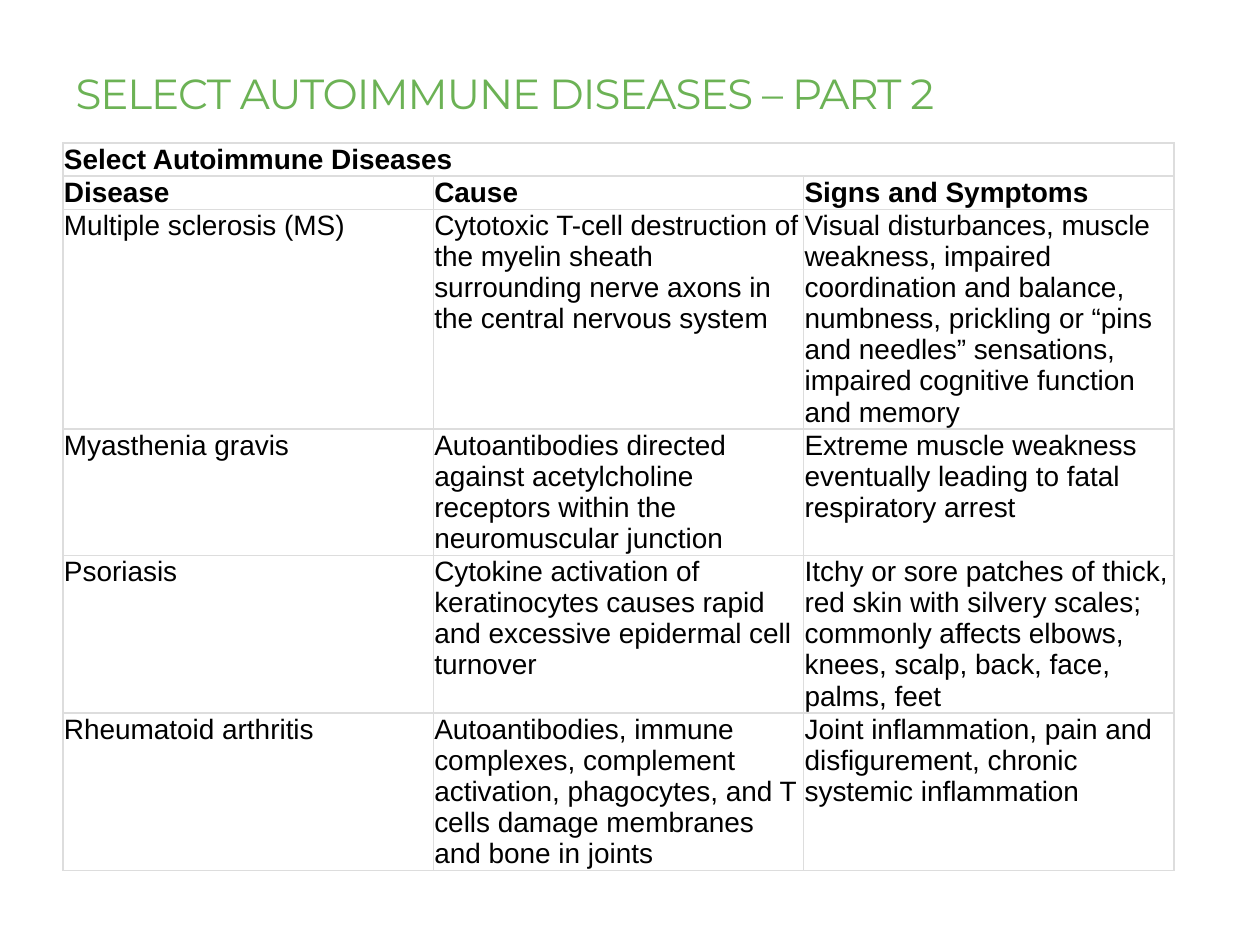
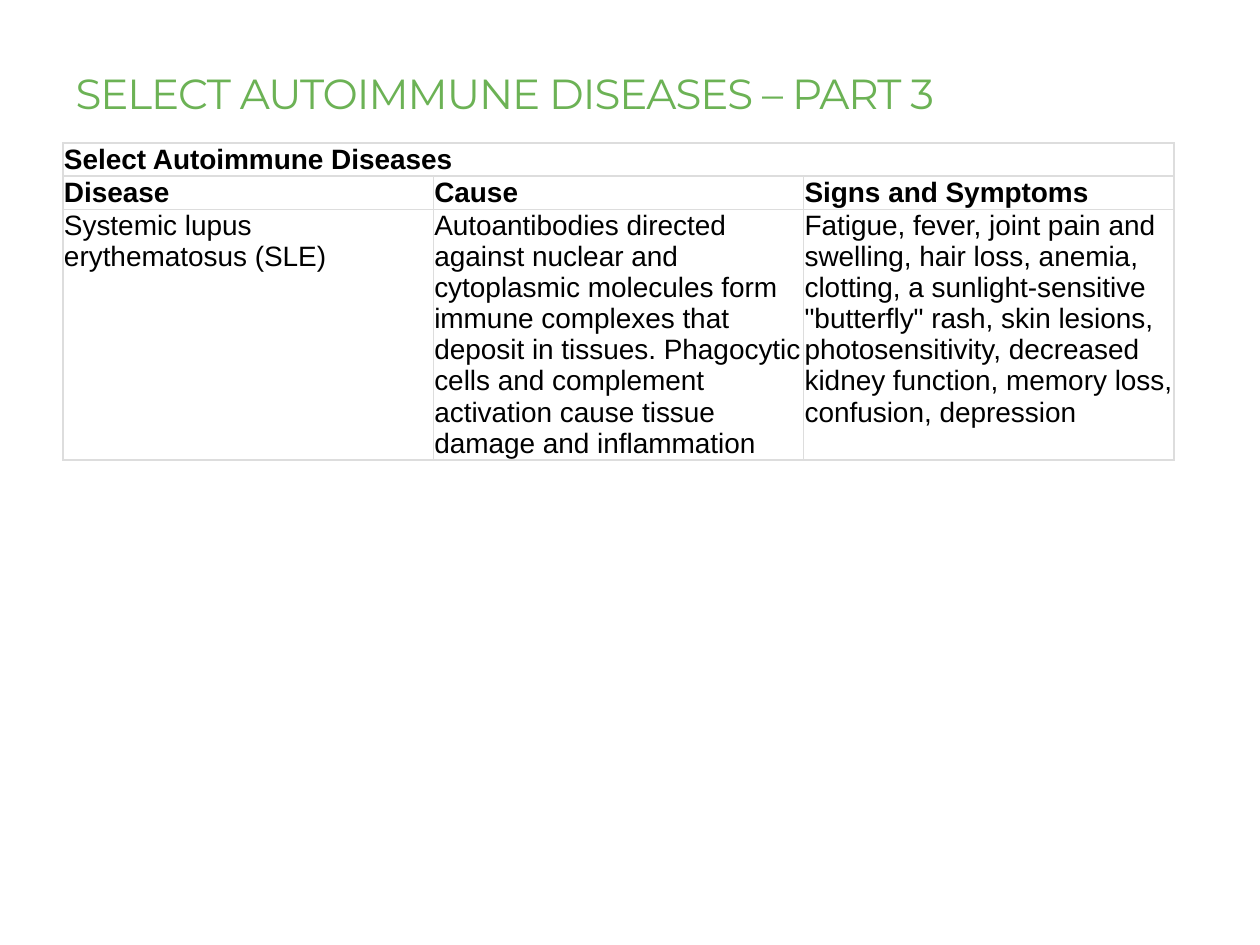
from lxml.etree import SubElement
from pptx import Presentation
from pptx.dml.color import RGBColor
from pptx.enum.text import MSO_ANCHOR as Anchor, MSO_AUTO_SIZE as AutoSize, PP_ALIGN as Align
from pptx.oxml.ns import qn
from pptx.util import Emu, Pt

COLORS = {"title": "6CB255", "text": "000000", "cell": "FFFFFF", "border": "DDDDDD"}
PX = 914400 / 126

# Boxes are left, top, width, height
TITLE_BOX = (63, 33, 1111, 91)
TABLE_BOX = (63, 143, 1111)
CELL_INSET = 1
HEADER_HEIGHT = 33
LINE_HEIGHT = 31
ROW_PADDING = 2

TABLE_CAPTION = "Select Autoimmune Diseases"
COLUMN_NAMES = ("Disease", "Cause", "Signs and Symptoms")

# Each part: title, then rows of (lines in the tallest cell, cell texts)
PARTS = [
    ("SELECT AUTOIMMUNE DISEASES – PART 2", [
        (7, ("Multiple sclerosis (MS)",
             "Cytotoxic T-cell destruction of the myelin sheath surrounding nerve axons "
             "in the central nervous system",
             "Visual disturbances, muscle weakness, impaired coordination and balance, "
             "numbness, prickling or “pins and needles” sensations, impaired cognitive "
             "function and memory")),
        (4, ("Myasthenia gravis",
             "Autoantibodies directed against acetylcholine receptors within the "
             "neuromuscular junction",
             "Extreme muscle weakness eventually leading to fatal respiratory arrest")),
        (5, ("Psoriasis",
             "Cytokine activation of keratinocytes causes rapid and excessive epidermal "
             "cell turnover",
             "Itchy or sore patches of thick, red skin with silvery scales; commonly "
             "affects elbows, knees, scalp, back, face, palms, feet")),
        (5, ("Rheumatoid arthritis",
             "Autoantibodies, immune complexes, complement activation, phagocytes, and "
             "T cells damage membranes and bone in joints",
             "Joint inflammation, pain and disfigurement, chronic systemic inflammation")),
    ]),
    ("SELECT AUTOIMMUNE DISEASES – PART 3", [
        (8, ("Systemic lupus erythematosus (SLE)",
             "Autoantibodies directed against nuclear and cytoplasmic molecules form "
             "immune complexes that deposit in tissues. Phagocytic cells and complement "
             "activation cause tissue damage and inflammation",
             "Fatigue, fever, joint pain and swelling, hair loss, anemia, clotting, a "
             "sunlight-sensitive \"butterfly\" rash, skin lesions, photosensitivity, "
             "decreased kidney function, memory loss, confusion, depression")),
    ]),
]


def px(length):
    return Emu(round(length * PX))


def color(name):
    return RGBColor.from_string(COLORS[name])


def style_font(font, name, size, color_name, bold=False):
    font.name, font.size, font.bold = name, Pt(size), bold
    font.color.rgb = color(color_name)


def fill_title(shape, text, box):
    shape.left, shape.top, shape.width, shape.height = map(px, box)
    frame = shape.text_frame
    frame.text = text
    frame.auto_size = AutoSize.NONE
    frame.vertical_anchor = Anchor.BOTTOM
    paragraph = frame.paragraphs[0]
    paragraph.alignment = Align.LEFT
    run = paragraph.runs[0]
    style_font(run.font, "Montserrat", 24, "title")
    run.font._element.set("spc", "-60")


def add_borders(cell):
    properties = cell._tc.get_or_add_tcPr()
    for side in ("lnL", "lnR", "lnT", "lnB"):
        line = SubElement(properties, qn(f"a:{side}"), w=str(Pt(1)))
        fill = SubElement(line, qn("a:solidFill"))
        SubElement(fill, qn("a:srgbClr"), val=COLORS["border"])


def fill_cell(cell, text, bold):
    cell.margin_left = cell.margin_right = px(CELL_INSET)
    cell.margin_top = cell.margin_bottom = px(CELL_INSET)
    add_borders(cell)
    cell.fill.solid()
    cell.fill.fore_color.rgb = color("cell")
    cell.text_frame.text = text
    for run in cell.text_frame.paragraphs[0].runs:
        style_font(run.font, "Arial", 16, "text", bold)


def add_disease_table(slide, diseases, box):
    left, top, width = box
    texts = [(TABLE_CAPTION, "", ""), COLUMN_NAMES] + [cells for _, cells in diseases]
    heights = [HEADER_HEIGHT] * 2
    heights += [lines * LINE_HEIGHT + ROW_PADDING for lines, _ in diseases]
    table = slide.shapes.add_table(len(texts), len(COLUMN_NAMES), px(left), px(top),
                                   px(width), px(sum(heights))).table
    table.first_row = table.horz_banding = False
    for index, (row_texts, height) in enumerate(zip(texts, heights)):
        table.rows[index].height = px(height)
        for cell, text in zip(table.rows[index].cells, row_texts):
            fill_cell(cell, text, bold=index < 2)
    # The caption spans every column
    table.cell(0, 0).merge(table.cell(0, len(COLUMN_NAMES) - 1))


def add_disease_slide(presentation, title, diseases):
    slide = presentation.slides.add_slide(presentation.slide_layouts[5])
    fill_title(slide.shapes.title, title, TITLE_BOX)
    add_disease_table(slide, diseases, TABLE_BOX)


def main():
    presentation = Presentation()
    presentation.slide_width, presentation.slide_height = px(1260), px(945)
    for title, diseases in PARTS:
        add_disease_slide(presentation, title, diseases)
    presentation.save("out.pptx")


if __name__ == "__main__":
    main()
